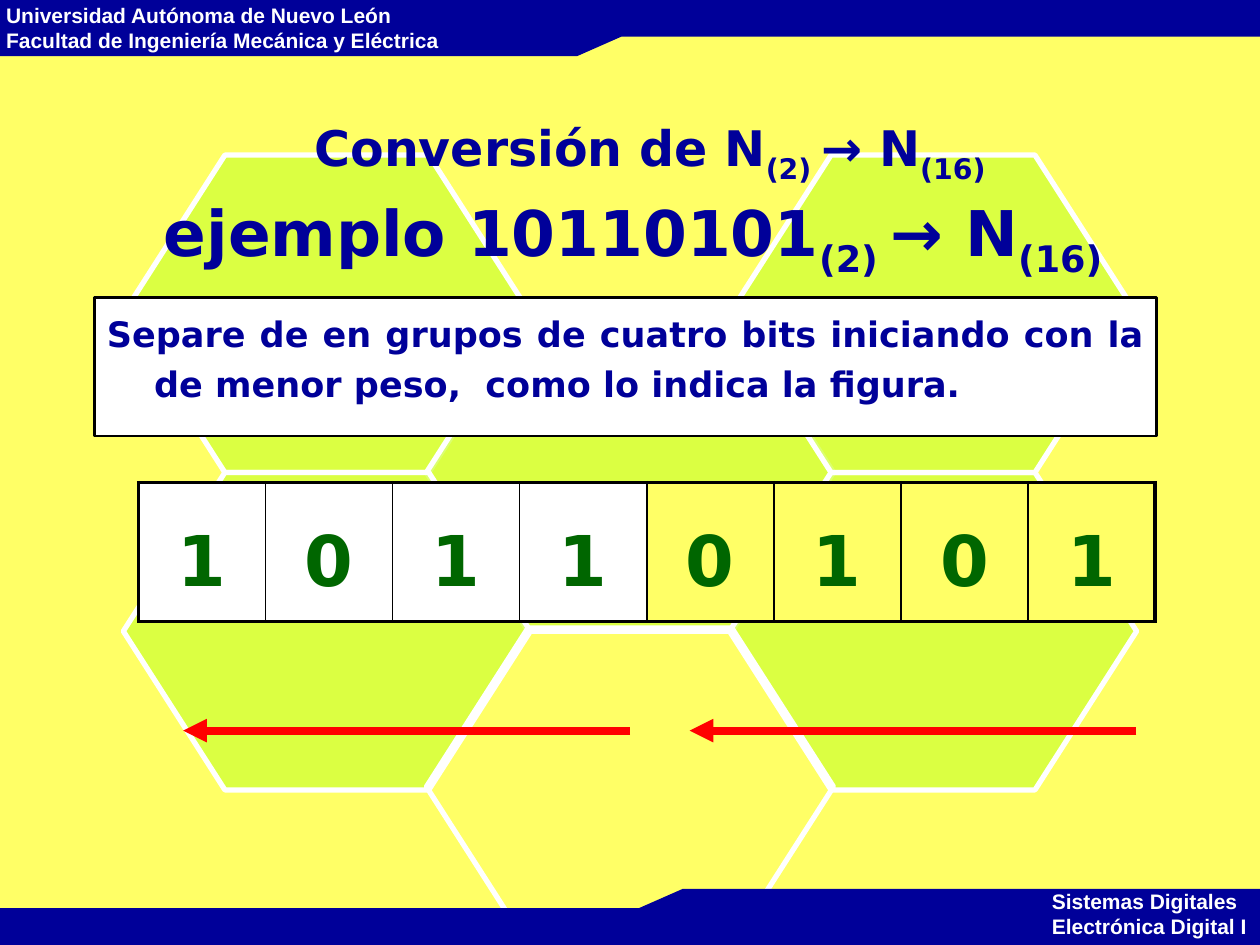
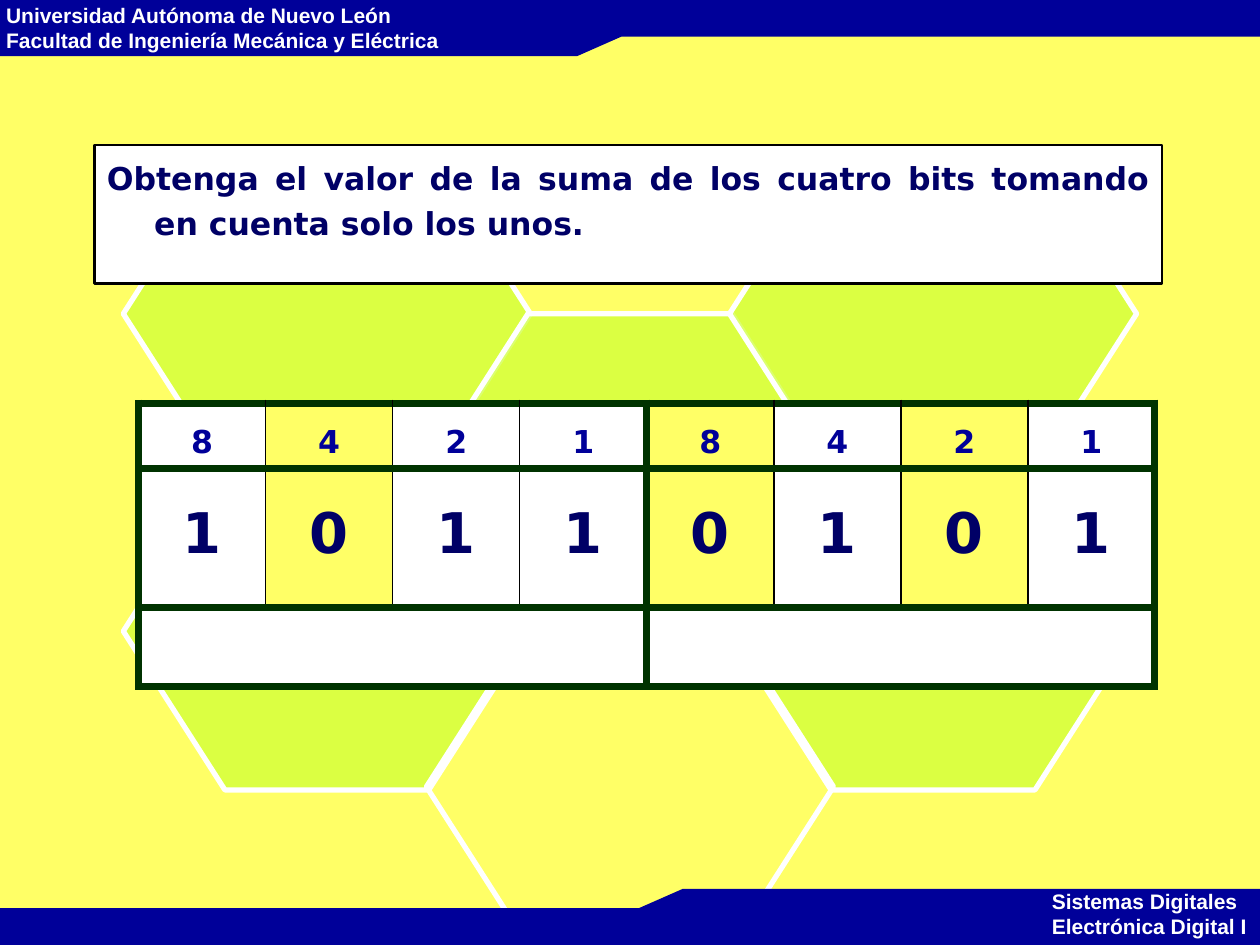
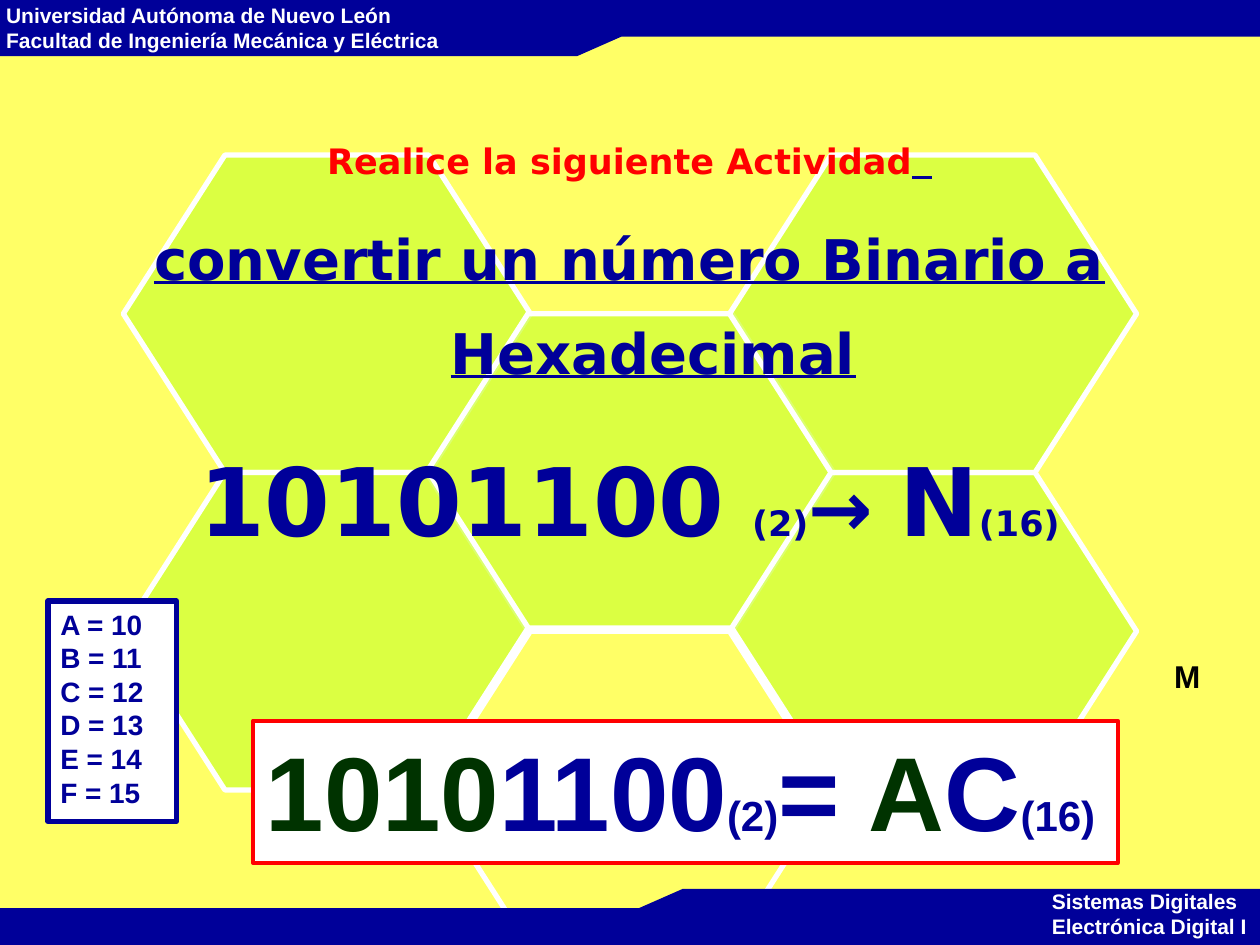
from dataclasses import dataclass
from typing import Optional

from lxml import etree
from pptx import Presentation
from pptx.dml.color import RGBColor
from pptx.enum.shapes import MSO_CONNECTOR, MSO_SHAPE
from pptx.enum.text import MSO_ANCHOR, MSO_AUTO_SIZE, PP_ALIGN
from pptx.oxml.ns import qn
from pptx.util import Pt

RECTANGLE, HEXAGON = MSO_SHAPE.RECTANGLE, MSO_SHAPE.HEXAGON
STRAIGHT = MSO_CONNECTOR.STRAIGHT
LEFT, CENTER, JUSTIFY = PP_ALIGN.LEFT, PP_ALIGN.CENTER, PP_ALIGN.JUSTIFY
TOP, MIDDLE = MSO_ANCHOR.TOP, MSO_ANCHOR.MIDDLE
GROW, FIXED = MSO_AUTO_SIZE.SHAPE_TO_FIT_TEXT, MSO_AUTO_SIZE.NONE

NAVY = RGBColor(0x00, 0x00, 0x99)
DARK_NAVY = RGBColor(0x00, 0x00, 0x66)
GREEN = RGBColor(0x00, 0x66, 0x00)
DARK_GREEN = RGBColor(0x00, 0x33, 0x00)
LIME = RGBColor(0xCC, 0xFF, 0x33)
YELLOW = RGBColor(0xFF, 0xFF, 0x66)
RED = RGBColor(0xFF, 0x00, 0x00)
WHITE = RGBColor(0xFF, 0xFF, 0xFF)
BLACK = RGBColor(0x00, 0x00, 0x00)

SANS, ARIAL = "DejaVu Sans", "Arial"
WIDTH, HEIGHT = 720, 540
BAND = [(0, 0), (WIDTH, 0), (WIDTH, 21), (355, 21), (330.5, 32.4), (0, 32.4)]
HEXAGON_CELLS = [(0, 0), (1, 1), (2, 2), (2, 0), (0, 2), (1, 2.98)]
HANGING = 27


@dataclass
class Run:
    text: str
    size: Optional[float] = None
    color: Optional[RGBColor] = None
    subscript: bool = False
    underline: bool = False


@dataclass
class TextStyle:
    size: float
    color: RGBColor
    font: str = ARIAL
    align: int = LEFT
    line_spacing: Optional[float] = None
    space_before: float = 0
    hanging: float = 0


class Deck:
    """Holds the presentation, its shared look and the slide being built."""

    def __init__(self):
        self.presentation = Presentation()
        self.presentation.slide_width = Pt(WIDTH)
        self.presentation.slide_height = Pt(HEIGHT)
        self.slide = None

    def new_slide(self):
        self.slide = self.presentation.slides.add_slide(self.presentation.slide_layouts[6])
        background = self.slide.background.fill
        background.solid()
        background.fore_color.rgb = YELLOW
        label = TextStyle(12, WHITE)
        self.band(BAND)
        self.text((-3.6, -2.2, 262, 36),
                  ["Universidad Autónoma de Nuevo León",
                   "Facultad de Ingeniería Mecánica y Eléctrica"],
                  label, wrap=False, auto_size=GROW)
        for column, row in HEXAGON_CELLS:
            self.hexagon(70.5 + 173.2 * column, 88.6 + 90.7 * row, filled=row <= 2)
        self.band([(WIDTH - x, HEIGHT - y) for x, y in BAND])
        self.text((594, 504, 126, 36), ["Sistemas Digitales", "Electrónica Digital I"],
                  label, wrap=False, auto_size=GROW)

    def paint(self, shape, fill=None, line=None):
        """Fill a shape and outline it with a (colour, width) pair."""
        shape.shadow.inherit = False
        if fill is None:
            shape.fill.background()
        else:
            shape.fill.solid()
            shape.fill.fore_color.rgb = fill
        if line is None:
            shape.line.fill.background()
        else:
            shape.line.color.rgb, shape.line.width = line[0], Pt(line[1])

    def band(self, points):
        builder = self.slide.shapes.build_freeform(*points[0], scale=Pt(1))
        builder.add_line_segments(points[1:])
        self.paint(builder.convert_to_shape(), NAVY)

    def hexagon(self, left, top, filled):
        shape = self.slide.shapes.add_shape(HEXAGON, Pt(left), Pt(top), Pt(232.6), Pt(181.4))
        shape.adjustments[0] = 0.32
        self.paint(shape, LIME if filled else None, (WHITE, 3))
        if filled:
            color = shape._element.spPr.find(qn("a:solidFill")).find(qn("a:srgbClr"))
            etree.SubElement(color, qn("a:alpha"), val="70000")

    def text(self, box, paragraphs, style, fill=None, line=None,
             wrap=True, auto_size=FIXED, anchor=TOP):
        """Add a text box, or a rectangle if filled; a paragraph is a string or a list of runs."""
        box = [Pt(length) for length in box]
        shapes = self.slide.shapes
        if fill is None:
            shape = shapes.add_textbox(*box)
        else:
            shape = shapes.add_shape(RECTANGLE, *box)
            self.paint(shape, fill, line)
        frame = shape.text_frame
        frame.word_wrap, frame.auto_size, frame.vertical_anchor = wrap, auto_size, anchor
        for index, content in enumerate(paragraphs):
            paragraph = frame.add_paragraph() if index else frame.paragraphs[0]
            self.fill_paragraph(paragraph, content, style)

    def fill_paragraph(self, paragraph, content, style):
        paragraph.alignment = style.align
        paragraph.space_before = Pt(style.space_before)
        if style.line_spacing:
            paragraph.line_spacing = style.line_spacing
        if style.hanging:
            properties = paragraph._p.get_or_add_pPr()
            properties.set("marL", str(Pt(style.hanging)))
            properties.set("indent", str(-Pt(style.hanging)))
        font = paragraph.font
        font.name, font.size, font.bold = style.font, Pt(style.size), True
        font.color.rgb = style.color
        for part in [Run(content)] if isinstance(content, str) else content:
            if part.text == "\n":
                paragraph.add_line_break()
                continue
            run = paragraph.add_run()
            run.text = part.text
            if part.size:
                run.font.size = Pt(part.size)
            if part.color is not None:
                run.font.color.rgb = part.color
            if part.underline:
                run.font.underline = True
            if part.subscript:
                run._r.get_or_add_rPr().set("baseline", "-25000")

    def instruction(self, box, content, size, color):
        style = TextStyle(size, color, SANS, JUSTIFY, 1.2, 0.2 * size, HANGING)
        self.text(box, [content], style, WHITE, (BLACK, 1.5))

    def arrow(self, start, end, y):
        connector = self.slide.shapes.add_connector(STRAIGHT, Pt(start), Pt(y), Pt(end), Pt(y))
        connector.line.color.rgb, connector.line.width = RED, Pt(4.5)
        properties = connector._element.spPr
        etree.SubElement(properties.find(qn("a:ln")), qn("a:tailEnd"), type="triangle")
        etree.SubElement(properties, qn("a:effectLst"))

    def bit_table(self, top, rows, fills, frame_line, group, result_height=0):
        """Draw rows of (digits, height, size, colour), with frame_line around each group
        of columns, and below them an empty row with one cell a group if it has a height."""
        heights = [row[1] for row in rows] + ([result_height] if result_height else [])
        count = len(fills)
        graphic = self.slide.shapes.add_table(len(heights), count, Pt(79.2), Pt(top),
                                              Pt(72.6 * count), Pt(sum(heights)))
        table = graphic.table
        table.first_row = table.horz_banding = False
        for column in table.columns:
            column.width = Pt(72.6)
        for index, height in enumerate(heights):
            table.rows[index].height = Pt(height)
            is_result = index == len(rows)
            for column in range(count):
                cell = table.cell(index, column)
                cell.fill.solid()
                cell.fill.fore_color.rgb = WHITE if is_result else fills[column]
                span = group if is_result and column % group == 0 else 1
                if span > 1:
                    cell.merge(table.cell(index, column + span - 1))
                sides = [frame_line if edge % group == 0 else (BLACK, 1)
                         for edge in (column, column + span)]
                self.borders(cell, sides + [frame_line, frame_line])
                if not is_result:
                    digits, _, size, color = rows[index]
                    style = TextStyle(size, color, SANS, CENTER, 1.4, 0.2 * size)
                    self.fill_paragraph(cell.text_frame.paragraphs[0], digits[column], style)

    def borders(self, cell, lines):
        """Set the left, right, top and bottom lines of a cell."""
        properties = cell._tc.get_or_add_tcPr()
        for position, (side, (color, width)) in enumerate(zip("LRTB", lines)):
            line = etree.Element(qn(f"a:ln{side}"), w=str(Pt(width)))
            fill = etree.SubElement(line, qn("a:solidFill"))
            etree.SubElement(fill, qn("a:srgbClr"), val=str(color))
            properties.insert(position, line)


def grouping_slide(deck):
    deck.new_slide()
    title = [Run("Conversión de N"), Run("(2) ", subscript=True), Run("→ N"),
             Run("(16)", subscript=True), Run("\n"),
             Run("ejemplo 10110101", 36), Run("(2) ", 36, subscript=True),
             Run("→ N", 36), Run("(16)", 36, subscript=True), Run("  ")]
    deck.text((42.5, 60.5, 658, 102.2), [title],
              TextStyle(28, NAVY, SANS, CENTER, 1.1), anchor=MIDDLE)
    deck.instruction((54, 170, 607, 79.2),
                     "Separe de en grupos de cuatro bits iniciando con la de menor peso,"
                     "  como lo indica la figura.", 20, NAVY)
    deck.bit_table(275.8, [("10110101", 79.2, 40, GREEN)],
                   [WHITE] * 4 + [YELLOW] * 4, (BLACK, 2.25), group=8)
    for start in (649.4, 360):
        deck.arrow(start, start - 255.3, 417.5)


def weights_slide(deck):
    deck.new_slide()
    deck.instruction((54, 82.8, 610, 79.2),
                     "Obtenga el valor de la suma de los cuatro bits tomando en cuenta "
                     "solo los unos.", 18, DARK_NAVY)
    bits = "10110101"
    deck.bit_table(230.4, [("84218421", 37.4, 18, NAVY), (bits, 79.2, 32, DARK_NAVY)],
                   [YELLOW if bit == "0" else WHITE for bit in bits],
                   (DARK_GREEN, 4.5), group=4, result_height=45.4)


def activity_slide(deck):
    deck.new_slide()
    answer = [Run("1010", color=DARK_GREEN), Run("1100"), Run("(2)", 24), Run("= "),
              Run("A", color=DARK_GREEN), Run("C"), Run("(16)", 24)]
    deck.text((144.7, 411.8, 494, 81.4), [answer], TextStyle(60, NAVY),
              WHITE, (RED, 2.25), wrap=False, auto_size=GROW)
    activity = [
        [Run("Realice la siguiente Actividad", 20, RED), Run(" ", underline=True)],
        [Run("convertir un número Binario a Hexadecimal", underline=True)],
        [Run("10101100", 54), Run(" ", 44), Run("(2)", 20), Run("→ ", 44),
         Run("N", 54), Run("(16)", 20)],
    ]
    deck.text((25.2, 49, 669, 215.3), activity,
              TextStyle(32, NAVY, SANS, CENTER, 1.4, 6.4, HANGING))
    digits = [f"{letter} = {value}" for value, letter in enumerate("ABCDEF", 10)]
    deck.text((27.4, 343.4, 73.4, 126), digits, TextStyle(16, NAVY),
              WHITE, (NAVY, 3), auto_size=GROW)
    deck.text((663.8, 372.2, 29.5, 28.8), ["M"], TextStyle(18, BLACK),
              wrap=False, auto_size=GROW)


def main():
    deck = Deck()
    grouping_slide(deck)
    weights_slide(deck)
    activity_slide(deck)
    deck.presentation.save("out.pptx")


if __name__ == "__main__":
    main()
